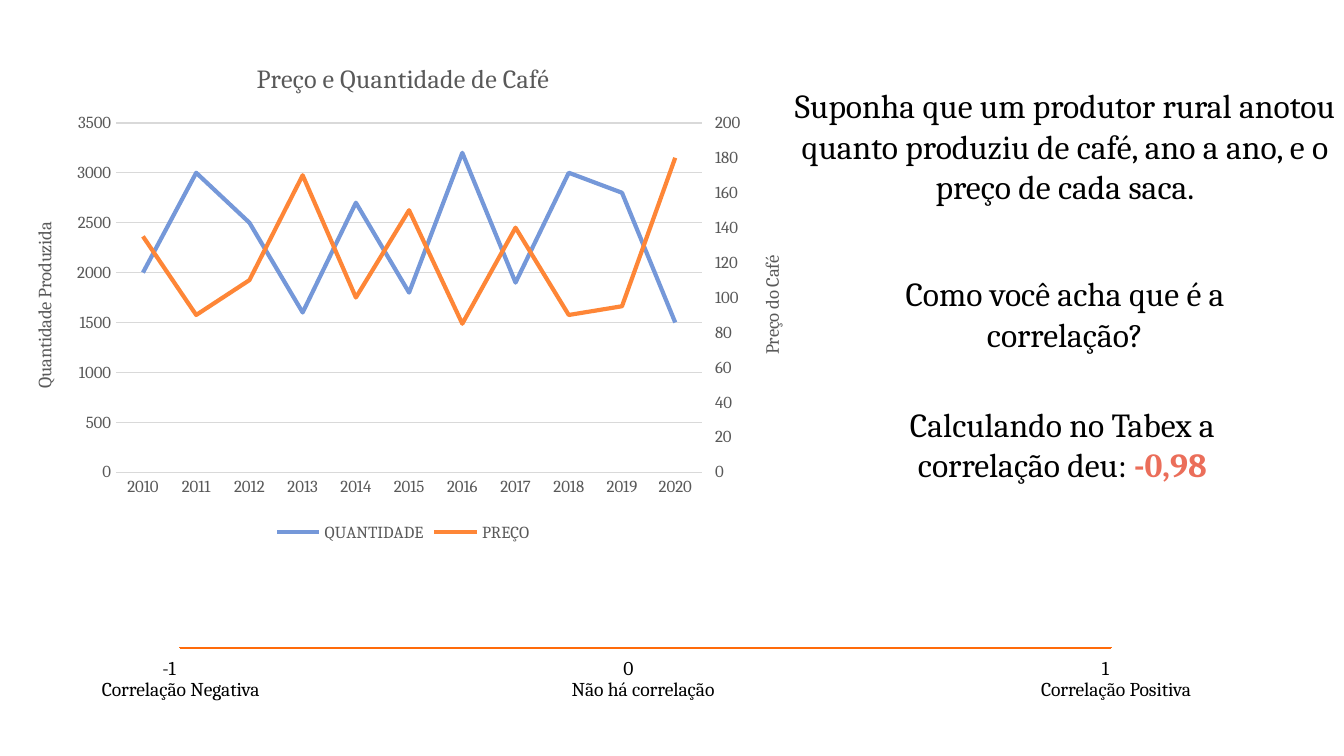
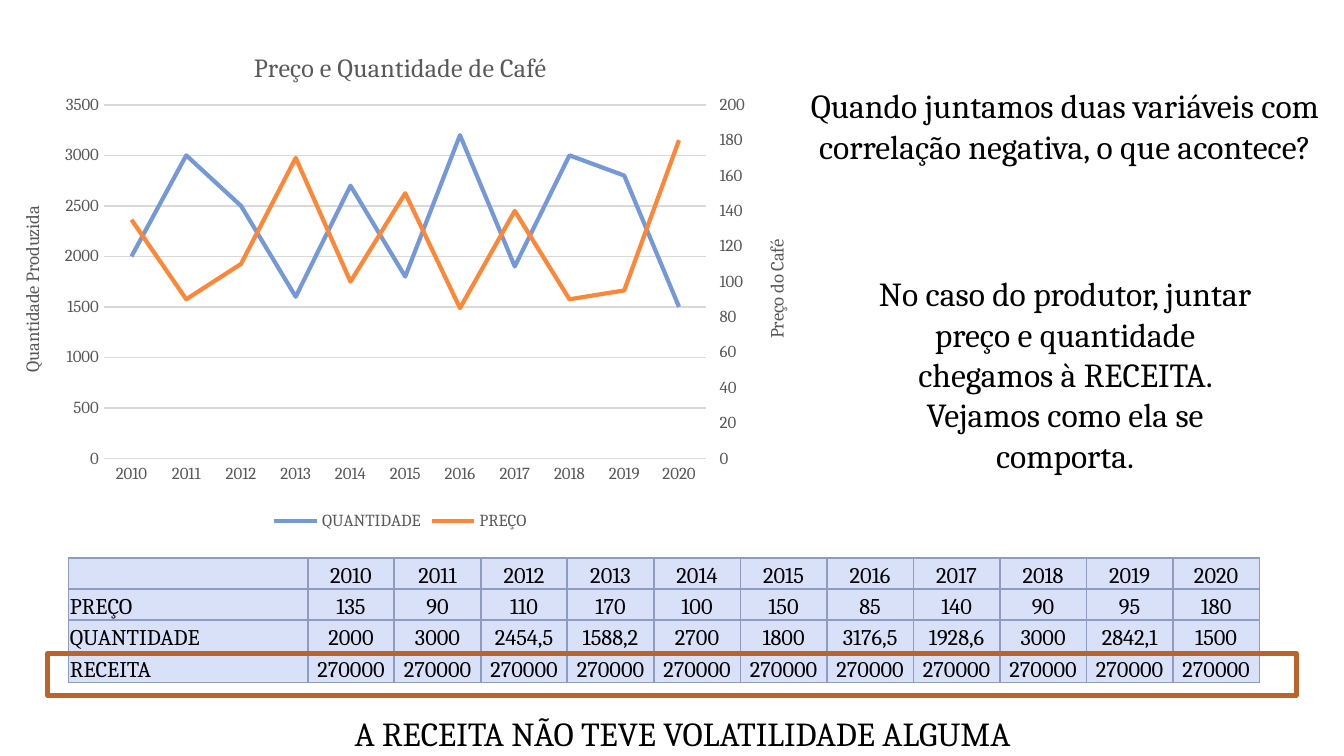
from copy import deepcopy

from lxml import etree
from pptx import Presentation
from pptx import util as u
from pptx.chart import axis as ax
from pptx.chart.data import CategoryChartData
from pptx.dml.color import RGBColor
from pptx.enum import chart as ch, shapes, text
from pptx.oxml.ns import qn

FONT = "Cambria"
HUES = {
    "ink": "000000", "gray": "595959", "grid": "D9D9D9", "blue": "7598D9",
    "orange": "FE8637", "scale": "FF6B0A", "alert": "EB6E5A",
    "frame": "BC6329", "cell": "D9E1F8", "edge": "8D9CBF",
}
COLS, ROWS = 100, 56.25  # slide grid, square cells
CELL = u.Inches(0.1)

YEARS = [str(year) for year in range(2010, 2021)]
PRICES = [135, 90, 110, 170, 100, 150, 85, 140, 90, 95, 180]
AMOUNTS = [2000, 3000, 2454.5, 1588.2, 2700, 1800, 3176.5, 1928.6, 3000,
           2842.1, 1500]
INCOME = [270000] * len(YEARS)


def grid(*cells):
    """Turn counts of grid cells into lengths."""
    return [u.Emu(int(n * CELL)) for n in cells]


def hue(name):
    return RGBColor.from_string(HUES[name])


def style(font, size, color="ink"):
    font.name, font.size, font.bold = FONT, u.Pt(size), False
    font.color.rgb = hue(color)


def ink(line, color, width):
    line.color.rgb = hue(color)
    line.width = u.Pt(width)


def write(frame, words, size=18, align=text.PP_ALIGN.CENTER):
    frame.word_wrap = True
    para = frame.paragraphs[0]
    para.text = words
    para.alignment = align
    style(para.font, size)
    return para


def add_text(parent, box, words, **look):
    return write(parent.add_textbox(*grid(*box)).text_frame, words, **look)


def add_line(parent, start, end):
    line = parent.add_connector(shapes.MSO_CONNECTOR.STRAIGHT,
                                *grid(*start, *end))
    ink(line.line, "scale", 1)
    etree.SubElement(line._element.spPr, qn("a:effectLst"))


def new_slide(deck, lead):
    """Add a slide whose title is the lead text at top right."""
    slide = deck.slides.add_slide(deck.slide_layouts[5])
    title = slide.shapes.title
    title.left, title.top, title.width, title.height = grid(
        57.6, 5.85, 43.3, 10.1)
    frame = title.text_frame
    write(frame, lead)
    frame.vertical_anchor = text.MSO_ANCHOR.TOP
    frame.auto_size = text.MSO_AUTO_SIZE.NONE
    return slide.shapes


def set_title(owner, words, size):
    """Title a chart or an axis."""
    title = owner.chart_title if hasattr(owner, "chart_title") \
        else owner.axis_title
    title.text_frame.text = words
    style(title.text_frame.paragraphs[0].font, size, "gray")
    return title


def dress(axis, words, top, step):
    """Format a value axis."""
    axis.minimum_scale, axis.maximum_scale = 0, top
    axis.major_unit = step
    axis.format.line.fill.background()
    style(axis.tick_labels.font, 9, "gray")
    title = set_title(axis, words, 10)
    title.text_frame._txBody.bodyPr.set("rot", "-5400000")


def split_axes(chart):
    """Move the second series to its own pair of axes; return the right one."""
    area = chart._chartSpace.chart.plotArea
    left = area.find(qn("c:lineChart"))
    right = deepcopy(left)
    left.remove(left.findall(qn("c:ser"))[1])
    right.remove(right.findall(qn("c:ser"))[0])
    left.addnext(right)
    cat, val = (deepcopy(area.find(qn(tag))) for tag in ("c:catAx", "c:valAx"))
    area.find(qn("c:valAx")).addnext(val)
    val.addnext(cat)
    ids = ("5001", "5002")
    for ref, name in zip(right.findall(qn("c:axId")), ids):
        ref.set("val", name)
    for node, own, other in ((cat, *ids), (val, *reversed(ids))):
        node.find(qn("c:axId")).set("val", own)
        node.find(qn("c:crossAx")).set("val", other)
    cat.find(qn("c:delete")).set("val", "1")
    val.find(qn("c:axPos")).set("val", "r")
    val.find(qn("c:crosses")).set("val", "max")
    return ax.ValueAxis(val)


def set_plot(chart, parts):
    """Fix the inner plot area in percent of the chart's size."""
    area = chart._chartSpace.chart.plotArea
    for old in area.findall(qn("c:layout")):
        area.remove(old)
    layout = etree.Element(qn("c:layout"))
    area.insert(0, layout)
    manual = etree.SubElement(layout, qn("c:manualLayout"))
    pairs = [("layoutTarget", "inner"), ("xMode", "edge"), ("yMode", "edge"),
             *zip("xywh", (part / 100 for part in parts))]
    for tag, val in pairs:
        etree.SubElement(manual, qn("c:" + tag), val=str(val))


def add_chart(parent, left, top, plot):
    data = CategoryChartData()
    data.categories = YEARS
    data.add_series("QUANTIDADE", [round(n, -2) for n in AMOUNTS])
    data.add_series("PREÇO", PRICES)
    chart = parent.add_chart(ch.XL_CHART_TYPE.LINE,
                             *grid(left, top, 59.6, 37.8), data).chart
    style(chart.font, 10)
    chart.has_title = chart.has_legend = True
    set_title(chart, "Preço e Quantidade de Café", 14)
    chart.legend.position = ch.XL_LEGEND_POSITION.BOTTOM
    chart.legend.include_in_layout = False
    style(chart.legend.font, 9, "gray")
    chart.plots[0].vary_by_categories = False
    for series, color in zip(chart.plots[0].series, ("blue", "orange")):
        series.smooth = False
        ink(series.format.line, color, 2.25)

    years, amount = chart.category_axis, chart.value_axis
    style(years.tick_labels.font, 9, "gray")
    ink(years.format.line, "grid", 0.75)
    amount.has_major_gridlines = False
    years.major_tick_mark = amount.major_tick_mark = ch.XL_TICK_MARK.NONE
    price = split_axes(chart)
    dress(amount, "Quantidade Produzida", 3500, 500)
    dress(price, "Preço do Café", 200, 20)
    price.major_tick_mark = ch.XL_TICK_MARK.OUTSIDE
    amount.has_major_gridlines = True
    ink(amount.major_gridlines.format.line, "grid", 0.75)
    set_plot(chart, plot)


def add_scale(parent):
    """Draw the line from -1 to 1 with its marks and captions."""
    group = parent.add_group_shape().shapes
    marks = [  # number, caption, left of tick, of number, of caption
        ("-1", "Correlação Negativa", 13.4, 11.1, 6),
        ("0", "Não há correlação", 46.7, 45.4, 40.4),
        ("1", "Correlação Positiva", 82.7, 81, 75.6),
    ]
    for num, label, tick, near, side in marks:
        add_line(group, (tick, 48.15), (tick, 48.25))
        add_text(group, (near, 48.3, 4.7, 2.8), num, size=10.5,
                 align=text.PP_ALIGN.LEFT)
        add_text(group, (side, 49.9, 14.9, 2.8), label, size=10.5)
    add_line(group, (13.4, 48.2), (82.7, 48.2))


def edge_cell(cell):
    props = cell._tc.get_or_add_tcPr()
    for spot, side in enumerate(("lnL", "lnR", "lnT", "lnB")):
        line = etree.Element(qn("a:" + side), w=str(u.Pt(1)))
        fill = etree.SubElement(line, qn("a:solidFill"))
        etree.SubElement(fill, qn("a:srgbClr"), val=HUES["edge"])
        props.insert(spot, line)


def add_table(parent):
    rows = [("", YEARS), ("PREÇO", PRICES), ("QUANTIDADE", AMOUNTS),
            ("RECEITA", INCOME)]
    table = parent.add_table(len(rows), len(YEARS) + 1,
                             *grid(5.1, 41.5, 88.6, 9.3)).table
    for col, width in zip(table.columns, grid(17.8, *[6.44] * len(YEARS))):
        col.width = width
    for r, (head, vals) in enumerate(rows):
        for c, val in enumerate([head, *vals]):
            cell = table.cell(r, c)
            cell.margin_left = cell.margin_right = cell.margin_top = \
                u.Inches(0.01)
            cell.margin_bottom = 0
            cell.vertical_anchor = text.MSO_ANCHOR.BOTTOM
            cell.fill.solid()
            cell.fill.fore_color.rgb = hue("cell")
            edge_cell(cell)
            para = cell.text_frame.paragraphs[0]
            para.text = str(val).replace(".", ",")
            para.alignment = (text.PP_ALIGN.CENTER if c
                              else text.PP_ALIGN.LEFT)
            style(para.font, 12)
            if not val:  # keeps the empty cell as low as its row
                etree.SubElement(para._p, qn("a:endParaRPr"), sz="1200")


def add_frame(parent, box):
    frame = parent.add_shape(shapes.MSO_SHAPE.RECTANGLE, *grid(*box))
    frame.shadow.inherit = False
    frame.fill.background()
    ink(frame.line, "frame", 2.75)


def main():
    deck = Presentation()
    deck.slide_width, deck.slide_height = grid(COLS, ROWS)

    ask = new_slide(deck, "Suponha que um produtor rural anotou quanto "
                    "produziu de café, ano a ano, e o preço de cada saca.")
    add_chart(ask, 0.2, 2.95, (14.2, 16.4, 73.1, 68.8))
    add_text(ask, (63.4, 19.83, 31.7, 7.1),
             "Como você acha que é a correlação?")
    add_scale(ask)
    para = add_text(ask, (63.2, 29.55, 31.7, 7.1),
                    "Calculando no Tabex a correlação deu: ")
    run = para.add_run()
    run.text = "-0,98"
    run.font.bold = True
    run.font.color.rgb = hue("alert")

    reply = new_slide(deck, "Quando juntamos duas variáveis com correlação "
                      "negativa, o que acontece?")
    add_chart(reply, 0, 2.1, (13, 15.1, 75.2, 69.6))
    add_text(reply, (63.4, 19.83, 31.7, 16.2),
             "No caso do produtor, juntar preço e quantidade chegamos à "
             "RECEITA. Vejamos como ela se comporta.")
    add_table(reply)
    add_frame(reply, (3.54, 48.63, 92.9, 3.1))
    add_text(reply, (3.54, 52.55, 94.5, 4),
             "A RECEITA NÃO TEVE VOLATILIDADE ALGUMA")
    deck.save("out.pptx")


if __name__ == "__main__":
    main()
